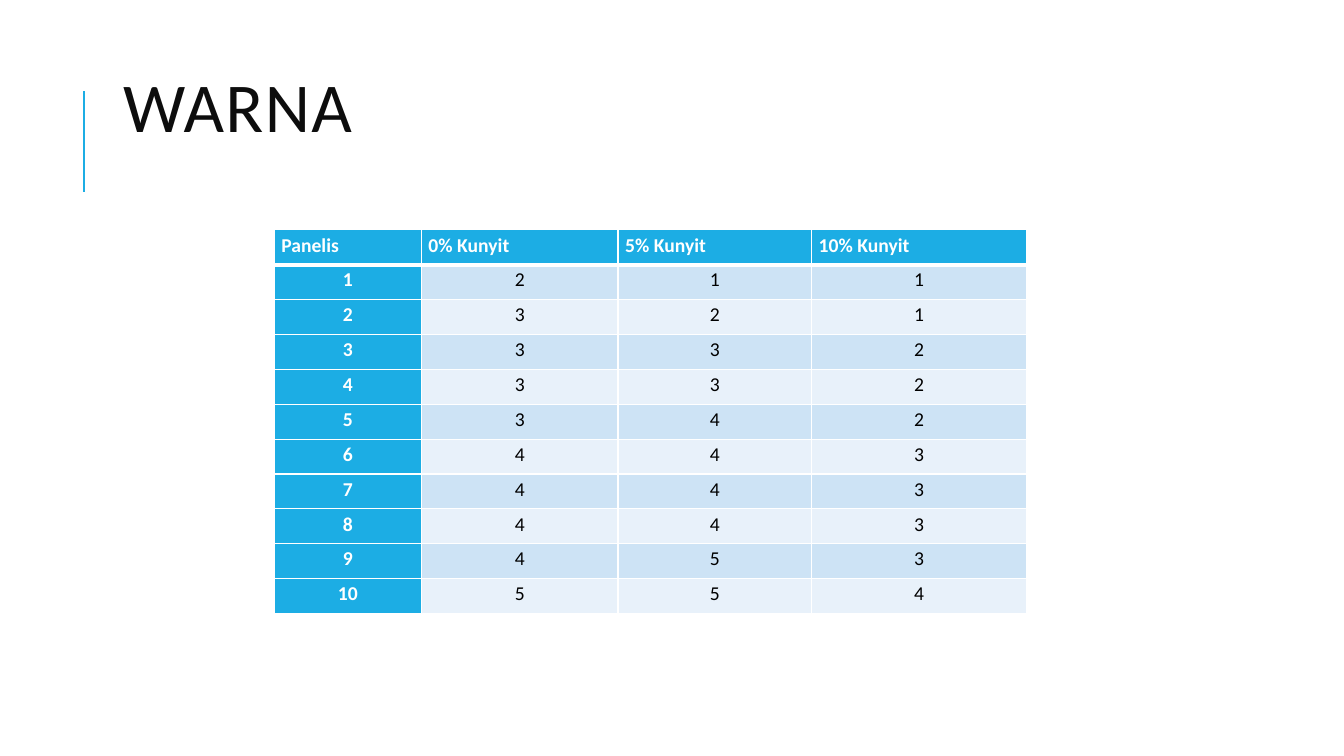
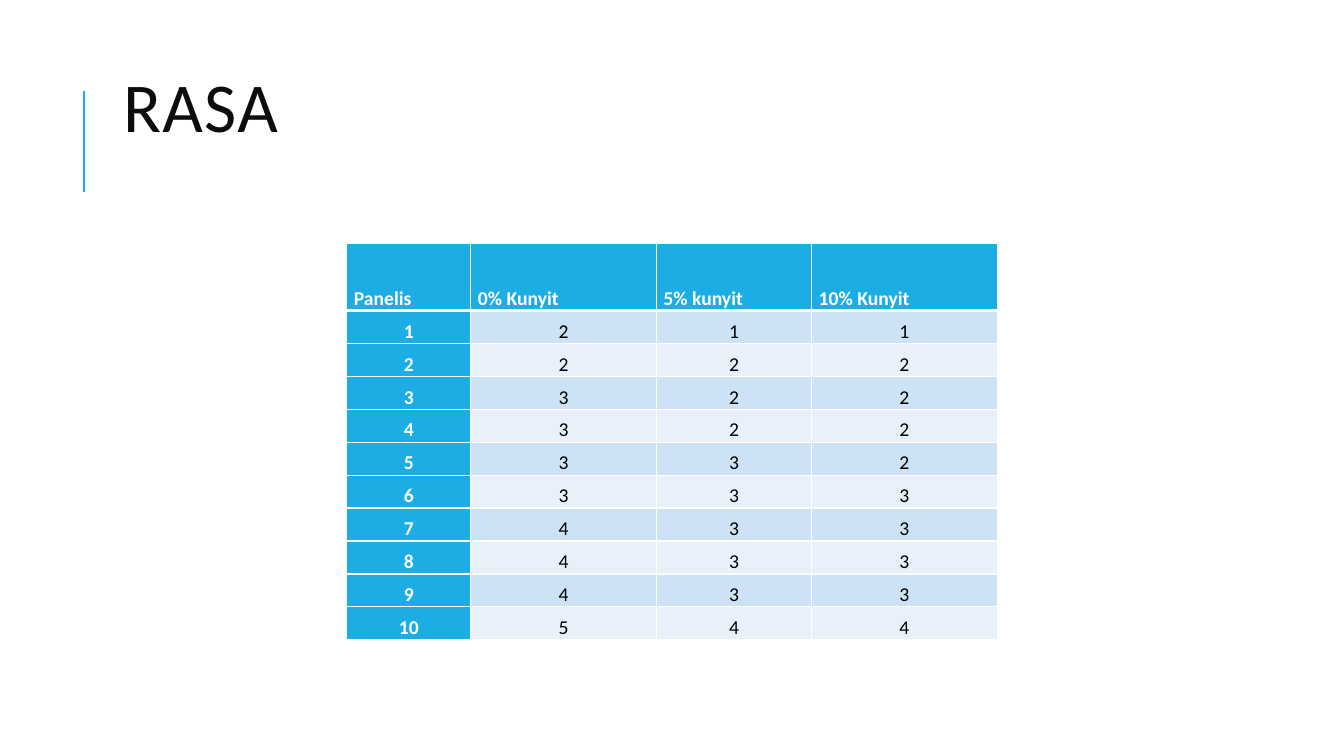
from dataclasses import dataclass

from lxml import etree
from pptx import Presentation
from pptx.dml.color import RGBColor
from pptx.enum import shapes, text
from pptx.oxml import ns
from pptx.util import Inches, Pt


@dataclass(frozen=True)
class Theme:
    font: str = "Calibri"
    accent: str = "1CADE4"
    title_color: str = "0D0D0D"
    body_color: str = "000000"
    white: str = "FFFFFF"
    bands: tuple = ("CDE3F5", "E8F1FA")
    title_size: int = 50
    table_size: int = 14
    rule_width: float = 1.5
    border_width: int = 1
    header_border_width: int = 3


class Deck:
    def __init__(self, theme):
        self.theme = theme
        self.presentation = Presentation()
        self.presentation.slide_width = Inches(13.33)
        self.presentation.slide_height = Inches(7.5)
        self.slide = None

    def add_slide(self, title):
        layout = self.presentation.slide_layouts.get_by_name("Title Only")
        self.slide = self.presentation.slides.add_slide(layout)
        self.add_title_rule()
        self.set_title(title)

    def add_title_rule(self):
        rule = self.slide.shapes.add_connector(
            shapes.MSO_CONNECTOR.STRAIGHT,
            Inches(0.83), Inches(1.9), Inches(0.83), Inches(0.9))
        rule.line.color.rgb = RGBColor.from_string(self.theme.accent)
        rule.line.width = Pt(self.theme.rule_width)
        etree.SubElement(rule._element.spPr, ns.qn("a:effectLst"))

    def set_title(self, title):
        shape = self.slide.shapes.title
        shape.left, shape.top = Inches(1.12), Inches(0.64)
        shape.width, shape.height = Inches(10.63), Inches(1.64)
        frame = shape.text_frame
        frame.word_wrap = True
        frame.auto_size = text.MSO_AUTO_SIZE.NONE
        frame.vertical_anchor = text.MSO_ANCHOR.TOP
        frame.margin_top = Inches(0.14)
        paragraph = frame.paragraphs[0]
        paragraph.alignment = text.PP_ALIGN.LEFT
        paragraph.line_spacing = 0.8
        run = self.add_run(paragraph, title, self.theme.title_size,
                           self.theme.title_color)
        run.font._element.set("spc", "100")

    def add_run(self, paragraph, words, size, color, bold=False):
        run = paragraph.add_run()
        run.text = words
        run.font.name = self.theme.font
        run.font.size = Pt(size)
        run.font.bold = bold
        run.font.color.rgb = RGBColor.from_string(color)
        return run

    def add_score_table(self, left, top, column_widths, header_height,
                        row_height, anchor, headers, scores):
        """Add a table whose first column numbers the rows of scores."""
        rows = [headers] + [(number, *row)
                            for number, row in enumerate(scores, 1)]
        heights = [header_height] + [row_height] * len(scores)
        table = self.slide.shapes.add_table(
            len(rows), len(headers), Inches(left), Inches(top),
            Inches(sum(column_widths)), Inches(sum(heights))).table
        for column, width in zip(table.columns, column_widths):
            column.width = Inches(width)
        for row, height in zip(table.rows, heights):
            row.height = Inches(height)
        for row_index, values in enumerate(rows):
            for column_index, value in enumerate(values):
                self.fill_cell(table.cell(row_index, column_index),
                               str(value), row_index, column_index, anchor)

    def fill_cell(self, cell, words, row_index, column_index, anchor):
        theme = self.theme
        is_header = row_index == 0
        emphasized = is_header or column_index == 0
        cell.margin_left = cell.margin_right = Inches(0.07)
        cell.margin_top = cell.margin_bottom = 0
        cell.vertical_anchor = anchor
        self.set_borders(cell, row_index)
        fill = theme.accent if emphasized else theme.bands[(row_index - 1) % 2]
        cell.fill.solid()
        cell.fill.fore_color.rgb = RGBColor.from_string(fill)
        paragraph = cell.text_frame.paragraphs[0]
        paragraph.alignment = (text.PP_ALIGN.LEFT if is_header
                               else text.PP_ALIGN.CENTER)
        paragraph.line_spacing = 1.15
        paragraph.space_after = Pt(8)
        self.add_run(paragraph, words, theme.table_size,
                     theme.white if emphasized else theme.body_color,
                     emphasized)

    def set_borders(self, cell, row_index):
        """Draw white cell edges, thicker between header and body."""
        thick_edge = {0: "lnB", 1: "lnT"}.get(row_index)
        properties = cell._tc.get_or_add_tcPr()
        for edge in ("lnL", "lnR", "lnT", "lnB"):
            width = (self.theme.header_border_width if edge == thick_edge
                     else self.theme.border_width)
            line = etree.SubElement(properties, ns.qn(f"a:{edge}"),
                                    w=str(Pt(width)))
            fill = etree.SubElement(line, ns.qn("a:solidFill"))
            etree.SubElement(fill, ns.qn("a:srgbClr"), val=self.theme.white)


def main():
    deck = Deck(Theme())

    deck.add_slide("WARNA")
    deck.add_score_table(
        left=2.72, top=2.28, column_widths=(1.46, 1.95, 1.92, 2.13),
        header_height=3.81 / 11, row_height=3.81 / 11,
        anchor=text.MSO_ANCHOR.TOP,
        headers=("Panelis", "0% Kunyit", "5% Kunyit", "10% Kunyit"),
        scores=[(2, 1, 1), (3, 2, 1), (3, 3, 2), (3, 3, 2), (3, 4, 2),
                (4, 4, 3), (4, 4, 3), (4, 4, 3), (4, 5, 3), (5, 5, 4)])

    deck.add_slide("RASA")
    deck.add_score_table(
        left=3.44, top=2.41, column_widths=(1.23, 1.84, 1.54, 1.84),
        header_height=0.67, row_height=(3.94 - 0.67) / 10,
        anchor=text.MSO_ANCHOR.BOTTOM,
        headers=("Panelis", "0% Kunyit", "5% kunyit", "10% Kunyit"),
        scores=[(2, 1, 1), (2, 2, 2), (3, 2, 2), (3, 2, 2), (3, 3, 2),
                (3, 3, 3), (4, 3, 3), (4, 3, 3), (4, 3, 3), (5, 4, 4)])

    deck.presentation.save("out.pptx")


if __name__ == "__main__":
    main()
